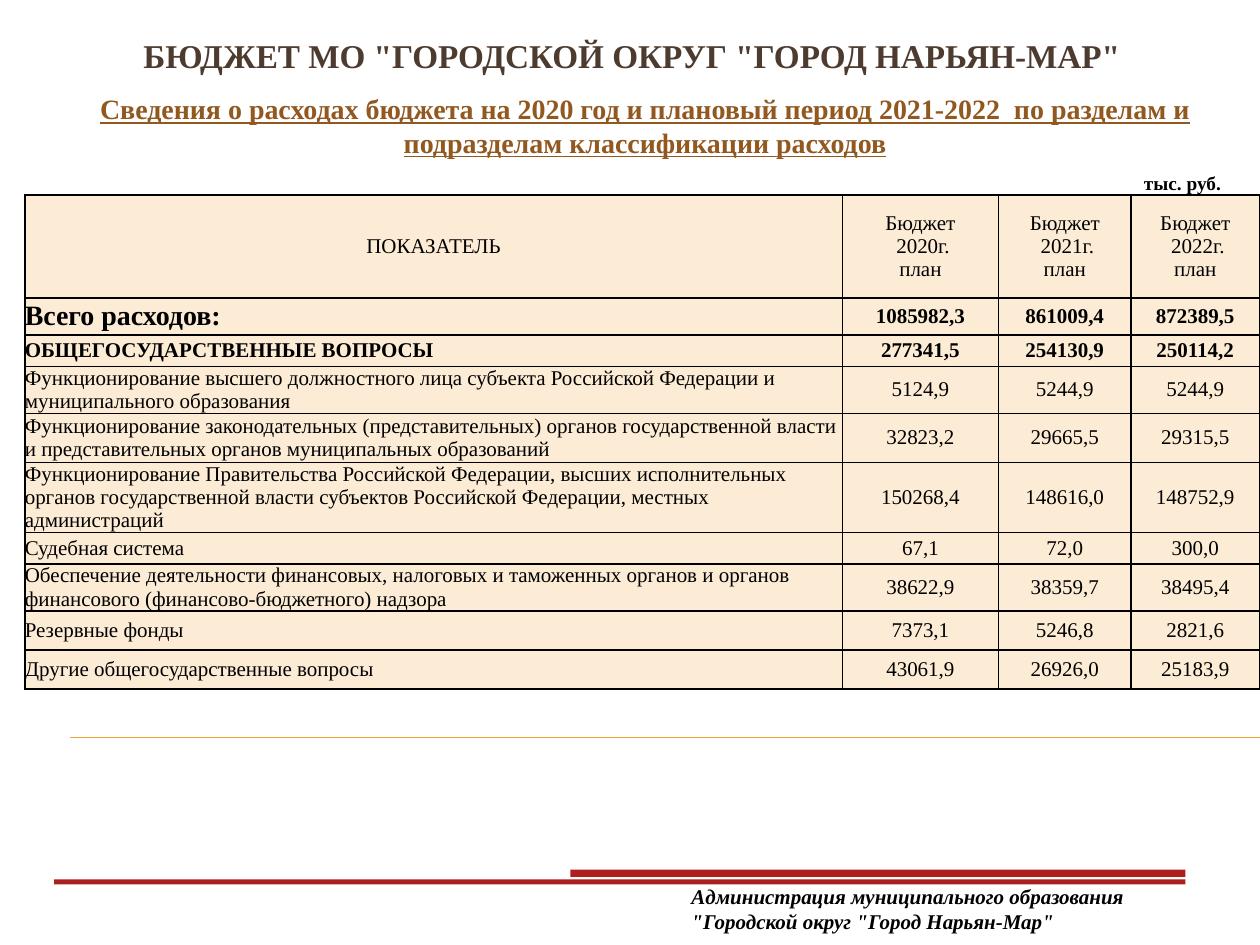
"""Build the budget expenditure slide with its table of planned figures."""
import pptx
import pptx.dml.color
import pptx.enum.shapes
import pptx.enum.text
import pptx.oxml
import pptx.oxml.ns
import pptx.util
from pptx.util import Cm, Pt

FONT = "Times New Roman"
COLORS = {"heading": "4E3B30", "subheading": "91581F", "text": "000000",
          "cell": "FCECD5", "bar": "AD1F1F", "rule": "F0A22E"}
ALIGN = pptx.enum.text.PP_ALIGN
ANCHOR = pptx.enum.text.MSO_ANCHOR

CAPTIONS = [
    ('БЮДЖЕТ МО "ГОРОДСКОЙ ОКРУГ "ГОРОД НАРЬЯН-МАР"', (0.99, 0.58, 23.5, 3.4),
     dict(size=19, color="heading", align=ALIGN.CENTER), ANCHOR.TOP),
    ("Сведения о расходах бюджета на 2020 год и плановый период 2021-2022  по разделам и "
     "подразделам классификации расходов", (1.5, 1.93, 23.01, 1.4),
     dict(size=16, color="subheading", align=ALIGN.CENTER, underline=True), ANCHOR.BOTTOM),
    ("тыс. руб.", (22.81, 3.33, 2.59, 0.74), dict(size=11), ANCHOR.TOP),
    ('Администрация муниципального образования "Городской округ "Город Нарьян-Мар"',
     (13.69, 6.96 * 2.54, 9.8, 1.27), dict(size=12, italic=True), ANCHOR.TOP),
]
YEARS = (2020, 2021, 2022)
HEADER = ["ПОКАЗАТЕЛЬ"] + [f"Бюджет\n {year}г.\nплан" for year in YEARS]
EXPENSES = [
    ("Всего расходов:", "1085982,3", "861009,4", "872389,5"),
    ("ОБЩЕГОСУДАРСТВЕННЫЕ ВОПРОСЫ", "277341,5", "254130,9", "250114,2"),
    ("Функционирование высшего должностного лица субъекта Российской Федерации и "
     "муниципального образования", "5124,9", "5244,9", "5244,9"),
    ("Функционирование законодательных (представительных) органов государственной власти "
     "и представительных органов муниципальных образований", "32823,2", "29665,5", "29315,5"),
    ("Функционирование Правительства Российской Федерации, высших исполнительных органов "
     "государственной власти субъектов Российской Федерации, местных администраций",
     "150268,4", "148616,0", "148752,9"),
    ("Судебная система", "67,1", "72,0", "300,0"),
    ("Обеспечение деятельности финансовых, налоговых и таможенных органов и органов "
     "финансового (финансово-бюджетного) надзора", "38622,9", "38359,7", "38495,4"),
    ("Резервные фонды", "7373,1", "5246,8", "2821,6"),
    ("Другие общегосударственные вопросы", "43061,9", "26926,0", "25183,9"),
]
COLUMN_WIDTHS = (16.48, 3.15, 2.67, 2.59)
ROW_HEIGHTS = (2.08, 0.74, 0.64, 0.79, 0.99, 1.07, 0.64, 0.79, 0.79, 0.79)
TOTAL_ROWS = (1, 2)
FOOTER_BARS = [(11.5, 17.53, 12.4, 0.15), (1.09, 17.73, 22.81, 0.1)]


def rgb(name):
    return pptx.dml.color.RGBColor.from_string(COLORS[name])


def write(frame, text, size, color="text", align=ALIGN.LEFT, bold=True, italic=False,
          underline=False):
    frame.text = text
    for paragraph in frame.paragraphs:
        paragraph.alignment = align
        font = paragraph.font
        font.name, font.size, font.bold = FONT, Pt(size), bold
        font.italic, font.underline = italic, underline
        font.color.rgb = rgb(color)


def add_border(cell):
    properties = cell._tc.get_or_add_tcPr()
    for position, side in enumerate(("lnL", "lnR", "lnT", "lnB")):
        properties.insert(position, pptx.oxml.parse_xml(
            f'<a:{side} {pptx.oxml.ns.nsdecls("a")} w="{Pt(1)}"><a:solidFill>'
            f'<a:srgbClr val="{COLORS["text"]}"/></a:solidFill></a:{side}>'))


def add_rule(slide):
    rule = slide.shapes.add_connector(pptx.enum.shapes.MSO_CONNECTOR.STRAIGHT,
                                      Cm(1.42), Cm(14.86), Cm(25.4), Cm(14.86))
    rule.line.color.rgb, rule.line.width = rgb("rule"), Pt(0.75)
    rule._element.spPr.append(
        pptx.oxml.parse_xml(f'<a:effectLst {pptx.oxml.ns.nsdecls("a")}/>'))


def add_expenses(slide):
    rows = [HEADER] + EXPENSES
    table = slide.shapes.add_table(len(rows), len(HEADER), Cm(0.5), Cm(3.93),
                                   Cm(sum(COLUMN_WIDTHS)), Cm(sum(ROW_HEIGHTS))).table
    table.first_row = table.horz_banding = False
    for column, width in zip(table.columns, COLUMN_WIDTHS):
        column.width = Cm(width)
    for r, (row, height) in enumerate(zip(rows, ROW_HEIGHTS)):
        table.rows[r].height = Cm(height)
        for c, text in enumerate(row):
            cell = table.cell(r, c)
            cell.vertical_anchor = ANCHOR.MIDDLE
            cell.margin_left = cell.margin_right = 0
            cell.margin_top = cell.margin_bottom = Cm(0.13 if r == 0 else 0)
            cell.fill.solid()
            cell.fill.fore_color.rgb = rgb("cell")
            add_border(cell)
            write(cell.text_frame, text, size=16 if (r, c) == (1, 0) else 12,
                  align=ALIGN.LEFT if r and c == 0 else ALIGN.CENTER, bold=r in TOTAL_ROWS)


def main():
    deck = pptx.Presentation()
    deck.slide_width, deck.slide_height = Cm(25.4), Cm(19.05)
    slide = deck.slides.add_slide(deck.slide_layouts[6])
    add_rule(slide)
    add_expenses(slide)
    for box in FOOTER_BARS:
        bar = slide.shapes.add_shape(pptx.enum.shapes.MSO_SHAPE.RECTANGLE, *map(Cm, box))
        bar.shadow.inherit = False
        bar.fill.solid()
        bar.fill.fore_color.rgb = rgb("bar")
        bar.line.fill.background()
    for text, box, style, anchor in CAPTIONS:
        frame = slide.shapes.add_textbox(*map(Cm, box)).text_frame
        frame.word_wrap, frame.vertical_anchor = True, anchor
        write(frame, text, **style)
    deck.save("out.pptx")


if __name__ == "__main__":
    main()
